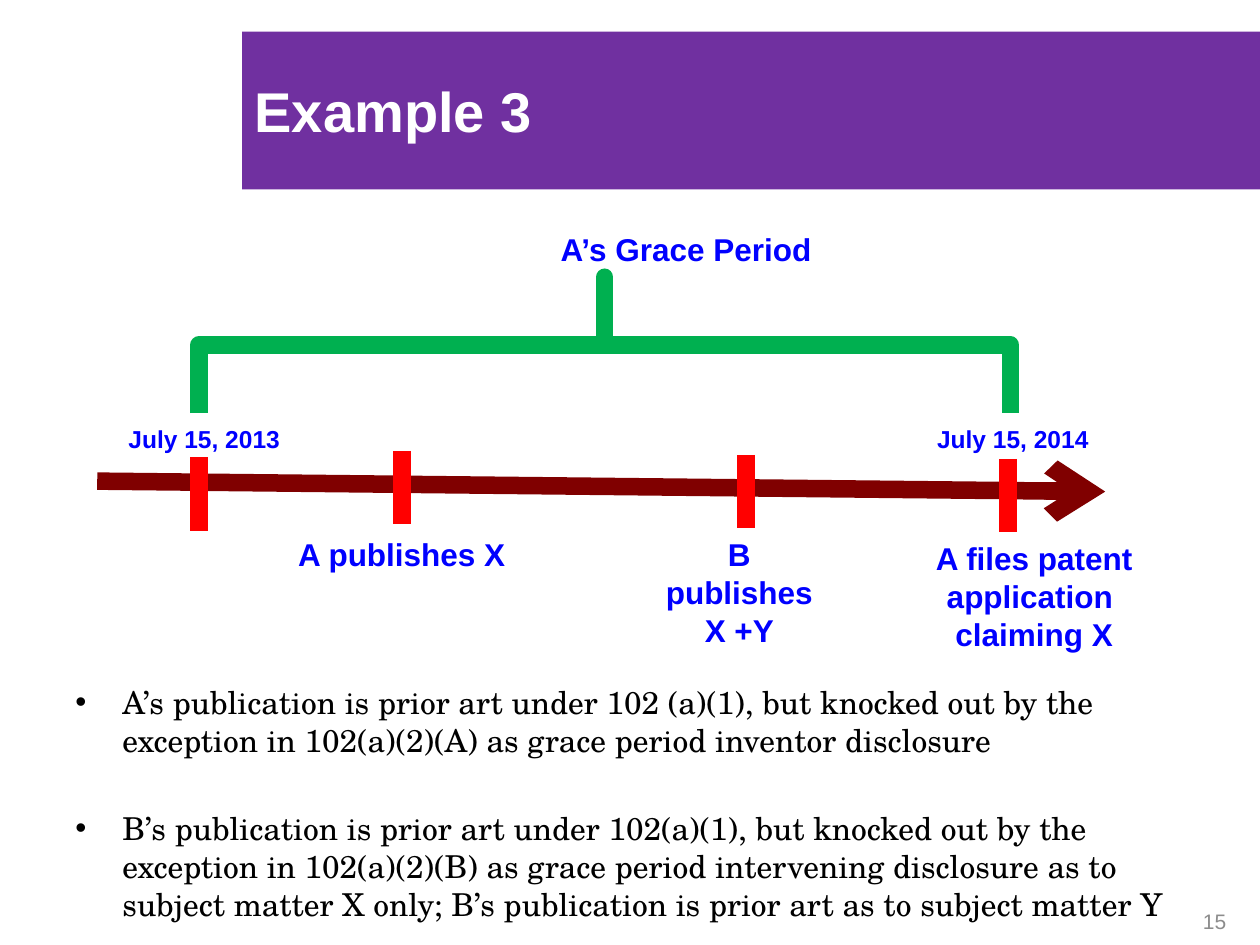
from dataclasses import dataclass

from lxml import etree
from pptx import Presentation
from pptx.dml.color import RGBColor
from pptx.enum.shapes import MSO_CONNECTOR, MSO_SHAPE
from pptx.enum.text import MSO_ANCHOR, PP_ALIGN
from pptx.oxml.ns import qn
from pptx.util import Cm, Pt

STRAIGHT = MSO_CONNECTOR.STRAIGHT
LEFT_BRACE = MSO_SHAPE.LEFT_BRACE
TOP, MIDDLE, BOTTOM = MSO_ANCHOR.TOP, MSO_ANCHOR.MIDDLE, MSO_ANCHOR.BOTTOM
LEFT, CENTER, RIGHT = PP_ALIGN.LEFT, PP_ALIGN.CENTER, PP_ALIGN.RIGHT


@dataclass(frozen=True)
class Theme:
    banner: str = "7030A0"
    banner_text: str = "FFFFFF"
    label: str = "0000FF"
    body: str = "000000"
    muted: str = "8C8C8C"
    axis: str = "800000"
    event: str = "FF0000"
    grace: str = "00B050"
    sans: str = "Arial"
    serif: str = "TeX Gyre Schola"
    title_size: int = 32
    text_size: int = 18
    date_size: int = 14
    number_size: int = 12
    stroke: int = 10


THEME = Theme()


@dataclass(frozen=True)
class Label:
    text: str
    left: float
    top: float
    width: float
    height: float
    size: int = THEME.text_size
    align: PP_ALIGN = CENTER


@dataclass(frozen=True)
class Tick:
    x: float
    top: float
    height: float = 1.48


LABELS = [
    Label("A’s Grace Period", 11.05, 4.52, 6.73, 1.02, align=LEFT),
    Label("July 15, 2013", 2.34, 8.43, 3.91, 0.86, THEME.date_size, LEFT),
    Label("July 15, 2014", 18.64, 8.43, 3.91, 0.86, THEME.date_size, LEFT),
    Label("A publishes X", 5.56, 10.67, 5.08, 1.02),
    Label("B publishes X +Y", 12.9, 10.67, 4.01, 2.57),
    Label("A files patent application \nclaiming X", 18.21, 10.74, 5.28, 2.57),
]
TICKS = [Tick(4.01, 9.22), Tick(8.1, 9.09), Tick(15.04, 9.17), Tick(20.32, 9.25)]
NOTES = [
    "A’s publication is prior art under 102 (a)(1), but knocked out by the "
    "exception in 102(a)(2)(A) as grace period inventor disclosure",
    "B’s publication is prior art under 102(a)(1), but knocked out by the "
    "exception in 102(a)(2)(B) as grace period intervening disclosure as to "
    "subject matter X only; B’s publication is prior art as to subject matter Y",
]


def style(para, size: int, color: str, face: str = THEME.sans, bold: bool = False) -> None:
    font = para.font
    font.name, font.size, font.bold = face, Pt(size), bold
    font.color.rgb = RGBColor.from_string(color)


def add_box(page, left: float, top: float, width: float, height: float, anchor=TOP):
    box = page.shapes.add_textbox(Cm(left), Cm(top), Cm(width), Cm(height))
    frame = box.text_frame
    frame.word_wrap = True
    frame.vertical_anchor = anchor
    return frame


def add_label(page, label: Label) -> None:
    frame = add_box(page, label.left, label.top, label.width, label.height)
    para = frame.paragraphs[0]
    para.text = label.text
    para.alignment = label.align
    style(para, label.size, THEME.label, bold=True)


def add_line(page, x1: float, y1: float, x2: float, y2: float, color: str, arrow: bool = False) -> None:
    line = page.shapes.add_connector(STRAIGHT, Cm(x1), Cm(y1), Cm(x2), Cm(y2))
    line.line.color.rgb = RGBColor.from_string(color)
    line.line.width = Pt(THEME.stroke)
    properties = line._element.spPr
    if arrow:
        etree.SubElement(properties.find(qn("a:ln")), qn("a:tailEnd"), type="arrow")
    etree.SubElement(properties, qn("a:effectLst"))


def add_grace_brace(page) -> None:
    brace = page.shapes.add_shape(LEFT_BRACE, Cm(10.82), Cm(-1.22), Cm(2.74), Cm(16.36))
    brace.rotation = 90
    brace.adjustments[0] = 0
    brace.adjustments[1] = 0.5
    brace.shadow.inherit = False
    brace.fill.background()
    brace.line.color.rgb = RGBColor.from_string(THEME.grace)
    brace.line.width = Pt(THEME.stroke)
    etree.SubElement(brace._element.spPr.find(qn("a:ln")), qn("a:round"))


def add_notes(page) -> None:
    frame = add_box(page, 1.27, 13.64, 22.86, 3.53)
    for index, text in enumerate(NOTES):
        para = frame.add_paragraph() if index else frame.paragraphs[0]
        para.text = text
        properties = para._p.get_or_add_pPr()
        properties.set("marL", str(Cm(0.95)))
        properties.set("indent", str(-Cm(0.95)))
        etree.SubElement(properties, qn("a:buFont"), typeface=THEME.sans)
        etree.SubElement(properties, qn("a:buChar"), char="•")
        if index:
            para.space_before = Pt(29)
        style(para, THEME.text_size, THEME.body, THEME.serif)


def add_title(page) -> None:
    title = page.shapes.title
    title.left, title.top, title.width, title.height = Cm(4.88), Cm(0.64), Cm(20.52), Cm(3.18)
    title.fill.solid()
    title.fill.fore_color.rgb = RGBColor.from_string(THEME.banner)
    title.text_frame.vertical_anchor = MIDDLE
    para = title.text_frame.paragraphs[0]
    para.text = "Example 3"
    para.alignment = LEFT
    style(para, THEME.title_size, THEME.banner_text, bold=True)


def add_page_number(page) -> None:
    frame = add_box(page, 19.69, 17.58, 5.28, 1.27, BOTTOM)
    frame.margin_bottom = Cm(0.03)
    para = frame.paragraphs[0]
    para.text = "15"
    para.alignment = RIGHT
    style(para, THEME.number_size, THEME.muted)


def main() -> None:
    deck = Presentation()
    deck.slide_width, deck.slide_height = Cm(25.4), Cm(19.05)
    page = deck.slides.add_slide(deck.slide_layouts[5])
    add_title(page)
    add_page_number(page)

    # Timeline with its events and the grace period above it
    add_line(page, 1.96, 9.7, 22.28, 9.91, THEME.axis, arrow=True)
    for tick in TICKS:
        add_line(page, tick.x, tick.top, tick.x, tick.top + tick.height, THEME.event)
    add_grace_brace(page)
    for label in LABELS:
        add_label(page, label)

    # Conclusions
    add_notes(page)
    deck.save("out.pptx")


if __name__ == "__main__":
    main()
